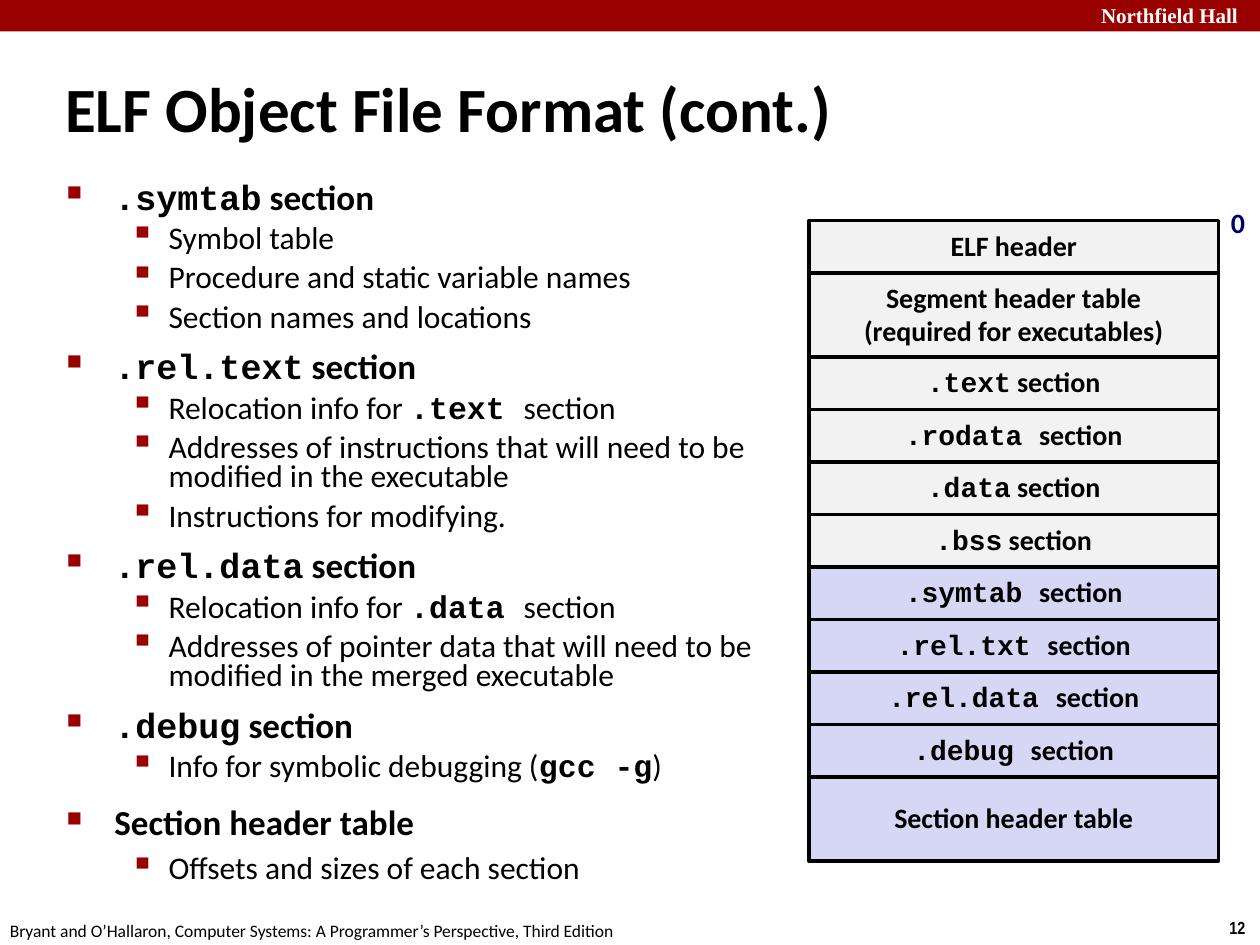
import dataclasses

import lxml.etree
import pptx
import pptx.dml.color
import pptx.enum.shapes
import pptx.enum.text
import pptx.oxml.ns
import pptx.util

Inches = pptx.util.Inches
Pt = pptx.util.Pt
ANCHOR = pptx.enum.text.MSO_ANCHOR
ALIGN = pptx.enum.text.PP_ALIGN
AUTO_SIZE = pptx.enum.text.MSO_AUTO_SIZE

COLORS = {
    "banner": "990000",
    "white": "FFFFFF",
    "black": "000000",
    "offset": "000066",
    "loaded": "F2F2F2",
    "linking": "D6D6F5",
}
SANS = "Calibri"
CODE = "Courier New"
CODE_MARK = "`"


@dataclasses.dataclass(frozen=True)
class BulletLevel:
    depth: int
    size: int
    bold: bool
    margin: float
    hanging: float
    before: float
    mark: str
    mark_percent: int


@dataclasses.dataclass(frozen=True)
class Bullet:
    level: BulletLevel
    text: str
    spacing: float


@dataclasses.dataclass(frozen=True)
class Row:
    text: str
    color: str
    height: float = 5 / 12
    spacing: float = 0.94


@dataclasses.dataclass(frozen=True)
class Label:
    text: str
    left: float
    top: float
    width: float
    height: float
    size: int
    font: str = SANS
    color: str = "black"
    bold: bool = True
    wrap: bool = False
    anchor: ANCHOR = ANCHOR.TOP
    auto_size: AUTO_SIZE = AUTO_SIZE.SHAPE_TO_FIT_TEXT


HEADING = BulletLevel(0, 20, True, 0.38, 0.38, 12.5, "■", 60)
DETAIL = BulletLevel(1, 18, False, 0.81, 0.31, 5.6, "▪", 110)

TOPICS = [
    ("`.symtab` section", 0.71, 0.78, [
        "Symbol table",
        "Procedure and static variable names",
        "Section names and locations",
    ]),
    ("`.rel.text` section", 0.71, 0.78, [
        "Relocation info for `.text `section",
        "Addresses of instructions that will need to be modified in the executable",
        "Instructions for modifying.",
    ]),
    ("`.rel.data` section", 0.71, 0.78, [
        "Relocation info for `.data `section",
        "Addresses of pointer data that will need to be modified in the merged executable",
    ]),
    ("`.debug` section", 0.71, 0.78, ["Info for symbolic debugging (`gcc -g`)"]),
    ("Section header table", 0.88, 0.88, ["Offsets and sizes of each section"]),
]

ROWS = [
    Row("ELF header", "loaded", spacing=0.98),
    Row("Segment header table\n(required for executables)", "loaded", 2 / 3, 0.98),
    Row("`.text` section", "loaded"),
    Row("`.rodata `section", "loaded"),
    Row("`.data` section", "loaded"),
    Row("`.bss` section", "loaded"),
    Row("`.symtab `section", "linking"),
    Row("`.rel.txt `section", "linking"),
    Row("`.rel.data `section", "linking"),
    Row("`.debug `section", "linking"),
    Row("Section header table", "linking", 2 / 3, 0.98),
]

LABELS = [
    Label("Northfield Hall", 8.64, -0.03, 1.43, 0.3, 12, "Times New Roman", "white", wrap=True),
    Label("12", 9.66, 7.23, 0.34, 0.27, 10, "Arial Narrow"),
    Label("Bryant and O’Hallaron, Computer Systems: A Programmer’s Perspective, Third Edition",
          -0.02, 7.25, 5.08, 0.27, 10, bold=False),
    Label("ELF Object File Format (cont.)", 0.42, 0.42, 9.53, 0.86, 36,
          wrap=True, anchor=ANCHOR.MIDDLE, auto_size=AUTO_SIZE.NONE),
    Label("0", 9.67, 1.58, 0.31, 0.37, 16, color="offset"),
]


def rgb(name: str) -> pptx.dml.color.RGBColor:
    return pptx.dml.color.RGBColor.from_string(COLORS[name])


def write(para, text: str, *, size: int, font: str = SANS, color: str = "black",
          bold: bool = True, align: ALIGN = ALIGN.LEFT, spacing: float = 1.0) -> None:
    para.alignment = align
    para.line_spacing = spacing
    for index, piece in enumerate(text.split(CODE_MARK)):
        if not piece:
            continue
        is_code = index % 2 == 1
        span = para.add_run()
        span.text = piece
        span.font.name = CODE if is_code else font
        span.font.size = Pt(size)
        span.font.bold = bold or is_code
        span.font.color.rgb = rgb(color)


def add_label(page, label: Label) -> None:
    box = page.shapes.add_textbox(Inches(label.left), Inches(label.top),
                                  Inches(label.width), Inches(label.height))
    frame = box.text_frame
    frame.word_wrap = label.wrap
    frame.auto_size = label.auto_size
    frame.vertical_anchor = label.anchor
    write(frame.paragraphs[0], label.text, size=label.size, font=label.font,
          color=label.color, bold=label.bold)


def add_rectangle(page, left: float, top: float, width: float, height: float, color: str):
    box = page.shapes.add_shape(pptx.enum.shapes.MSO_SHAPE.RECTANGLE, Inches(left),
                                Inches(top), Inches(width), Inches(height))
    box.shadow.inherit = False
    box.fill.solid()
    box.fill.fore_color.rgb = rgb(color)
    box.line.fill.background()
    return box


def add_row(page, row: Row, top: float) -> None:
    box = add_rectangle(page, 6.42, top, 3.25, row.height, row.color)
    box.line.color.rgb = rgb("black")
    box.line.width = Pt(2)
    frame = box.text_frame
    frame.word_wrap = False
    frame.vertical_anchor = ANCHOR.MIDDLE
    for index, line in enumerate(row.text.split("\n")):
        para = frame.add_paragraph() if index else frame.paragraphs[0]
        write(para, line, size=16, align=ALIGN.CENTER, spacing=row.spacing)


def set_bullet(para, level: BulletLevel) -> None:
    para.level = level.depth
    para.space_before = Pt(level.before)
    settings = para._p.get_or_add_pPr()
    settings.set("marL", str(Inches(level.margin)))
    settings.set("indent", str(-Inches(level.hanging)))
    qn = pptx.oxml.ns.qn
    tint = lxml.etree.SubElement(settings, qn("a:buClr"))
    lxml.etree.SubElement(tint, qn("a:srgbClr"), val=COLORS["banner"])
    lxml.etree.SubElement(settings, qn("a:buSzPct"), val=str(level.mark_percent * 1000))
    lxml.etree.SubElement(settings, qn("a:buChar"), char=level.mark)


def add_bullets(page, bullets: list[Bullet]) -> None:
    box = page.shapes.add_textbox(Inches(0.43), Inches(1.43), Inches(5.77), Inches(5.98))
    frame = box.text_frame
    frame.word_wrap = True
    for index, bullet in enumerate(bullets):
        para = frame.add_paragraph() if index else frame.paragraphs[0]
        write(para, bullet.text, size=bullet.level.size, bold=bullet.level.bold,
              spacing=bullet.spacing)
        set_bullet(para, bullet.level)


def main() -> None:
    deck = pptx.Presentation()
    deck.slide_width, deck.slide_height = Inches(10), Inches(7.5)
    page = deck.slides.add_slide(deck.slide_layouts[6])
    add_rectangle(page, 0, 0, 10, 0.25, "banner")
    for label in LABELS:
        add_label(page, label)
    bullets = []
    for heading, heading_spacing, detail_spacing, details in TOPICS:
        bullets.append(Bullet(HEADING, heading, heading_spacing))
        bullets += [Bullet(DETAIL, detail, detail_spacing) for detail in details]
    add_bullets(page, bullets)
    top = 1.75
    for row in ROWS:
        add_row(page, row, top)
        top += row.height
    deck.save("out.pptx")


if __name__ == "__main__":
    main()
